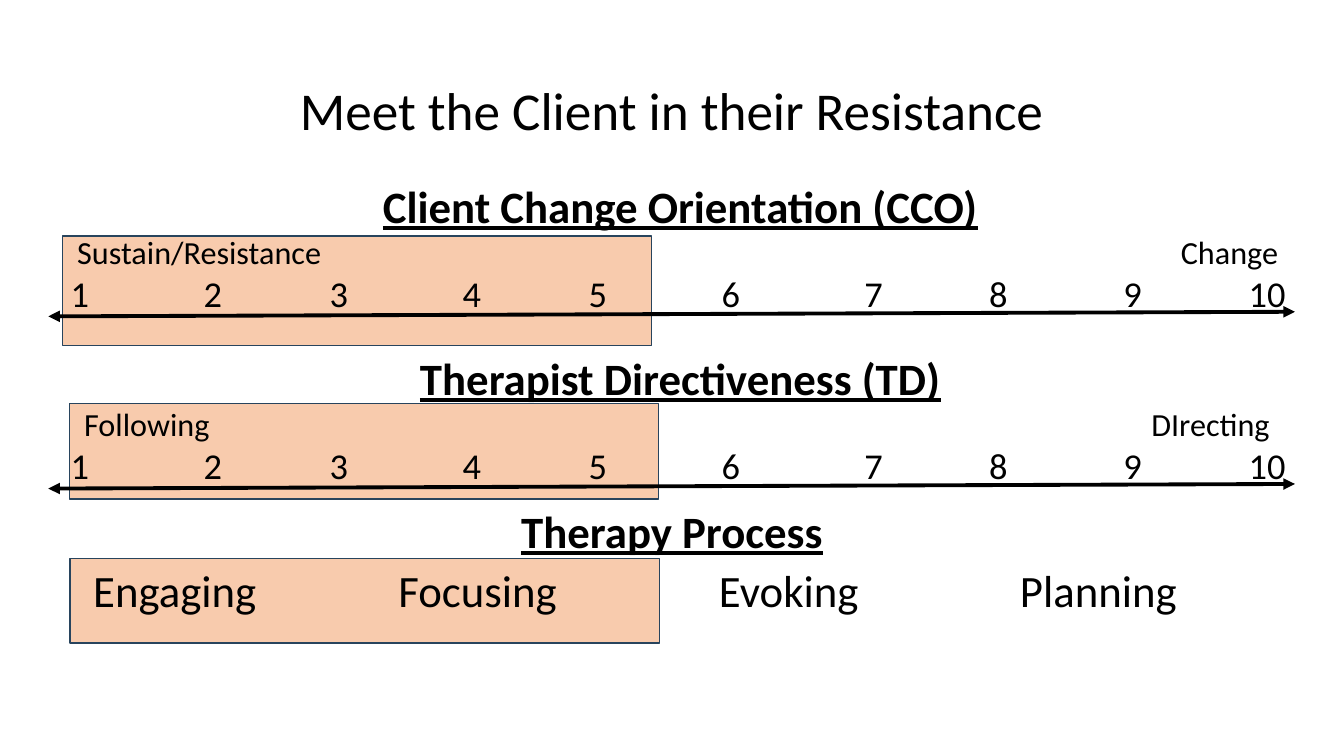
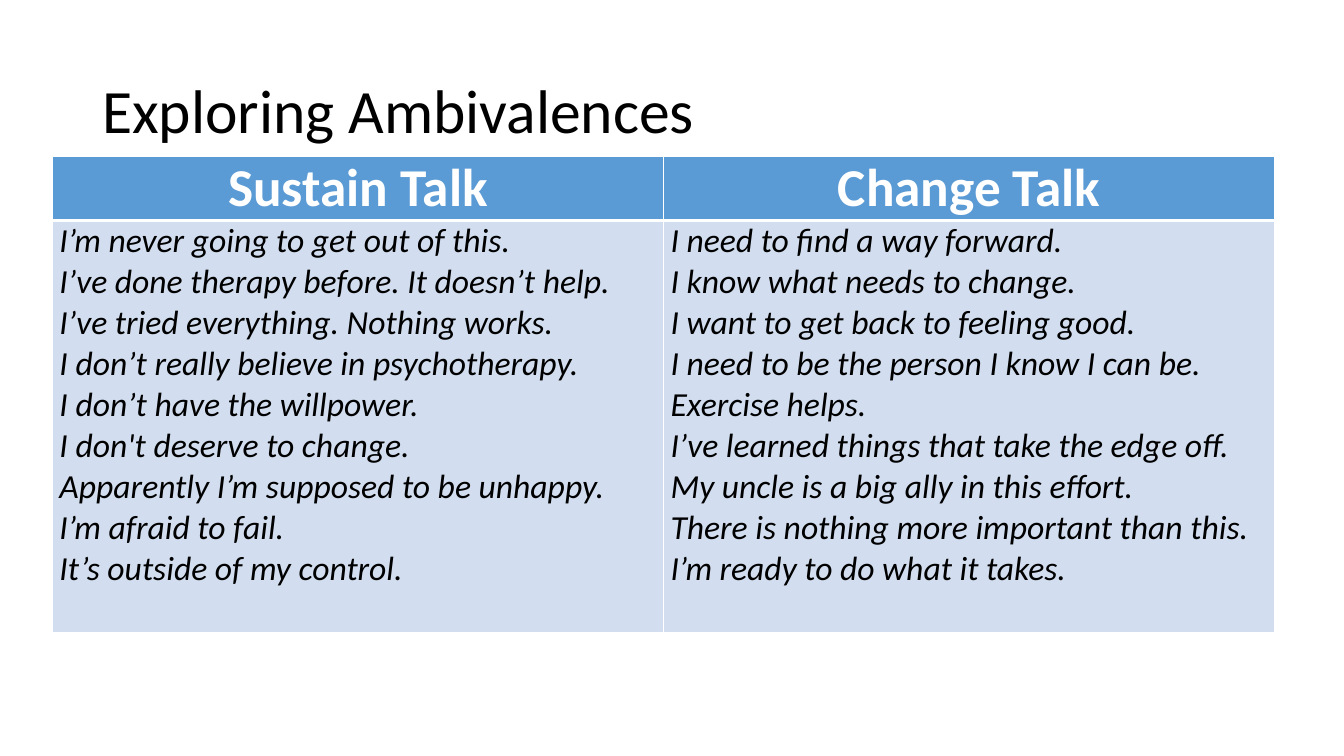
"""Builds two slides on client resistance and ambivalence."""
from lxml.etree import SubElement
from pptx import Presentation
from pptx.dml.color import RGBColor
from pptx.enum.shapes import MSO_CONNECTOR, MSO_SHAPE
from pptx.enum.text import MSO_ANCHOR, PP_ALIGN
from pptx.oxml.ns import qn
from pptx.util import Pt

FONT = "Calibri"
BLACK, WHITE = "000000", "FFFFFF"
PEACH, NAVY = "F8CBAD", "28445D"
BLUE, PALE = "5B9BD5", "D2DEEF"
TITLE = (66, 29, 828, 104)
HEAD = dict(size=32, bold=True, line=True, align="ctr")
MARKS = (15, 110, 200, 295, 385, 480, 582, 671, 767, 863)
STEPS = {"Engaging": 55, "Focusing": 273, "Evoking": 502, "Planning": 717}

TALK = {
    "Sustain Talk": (
        "I’m never going to get out of this.",
        "I’ve done therapy before. It doesn’t help.",
        "I’ve tried everything. Nothing works.",
        "I don’t really believe in psychotherapy.",
        "I don’t have the willpower.",
        "I don't deserve to change.",
        "Apparently I’m supposed to be unhappy.",
        "I’m afraid to fail.",
        "It’s outside of my control.",
    ),
    "Change Talk": (
        "I need to find a way forward.",
        "I know what needs to change.",
        "I want to get back to feeling good.",
        "I need to be the person I know I can be.",
        "Exercise helps.",
        "I’ve learned things that take the edge off.",
        "My uncle is a big ally in this effort.",
        "There is nothing more important than this.",
        "I’m ready to do what it takes.",
    ),
}


def paint(target, color):
    """Give a fill or line a solid colour."""
    target.solid()
    target.fore_color.rgb = RGBColor.from_string(color)


def write(frame, text, size, color=BLACK, bold=False, slant=False,
          line=False, align="l", space=None, tabs=()):
    """Add a paragraph, with tab stops given as (kind, place) pairs."""
    para = frame.paragraphs[0] if not frame.text else frame.add_paragraph()
    if tabs:
        stops = SubElement(para._p.get_or_add_pPr(), qn("a:tabLst"))
        for kind, place in tabs:
            SubElement(stops, qn("a:tab"), pos=str(Pt(place)), algn=kind)
    para.alignment = PP_ALIGN.from_xml(align)
    para.line_spacing = space
    run = para.add_run()
    run.text = text
    font = run.font
    font.name, font.size = FONT, Pt(size)
    font.bold, font.italic, font.underline = bold, slant, line
    paint(font.fill, color)


def spread(frame, words, tabs, size):
    """Write words on one line, each at its own tab stop."""
    write(frame, "".join("\t" + word for word in words), size, tabs=tabs)


def frame_at(slide, box, anchor=MSO_ANCHOR.TOP):
    """Add a wrapping text box and return its frame."""
    frame = slide.shapes.add_textbox(*map(Pt, box)).text_frame
    frame.word_wrap = True
    frame.vertical_anchor = anchor
    return frame


def title(slide, text, size, align="l"):
    """Place the slide title."""
    frame = frame_at(slide, TITLE, MSO_ANCHOR.MIDDLE)
    write(frame, text, size, align=align, space=0.9)


def panel(slide, left, top, high):
    """Draw the peach panel behind the resistant half."""
    shape = slide.shapes.add_shape(
        MSO_SHAPE.RECTANGLE, Pt(left), Pt(top), Pt(421), Pt(high))
    shape.shadow.inherit = False
    paint(shape.fill, PEACH)
    paint(shape.line.fill, NAVY)
    shape.line.width = Pt(1)


def arrow(slide, *ends):
    """Draw a line with a head at both ends."""
    link = slide.shapes.add_connector(MSO_CONNECTOR.STRAIGHT, *map(Pt, ends))
    paint(link.line.fill, BLACK)
    link.line.width = Pt(2.75)
    for end in ("a:headEnd", "a:tailEnd"):
        SubElement(link.line._get_or_add_ln(), qn(end), type="triangle")
    SubElement(link._element.spPr, qn("a:effectLst"))


def scale(slide, box, name, ends, tabs, back):
    """Draw a ten-point scale; back is the panel's offset and height."""
    left, top, wide, _ = box
    right, down, high = back
    panel(slide, left + right, top + down, high)
    frame = frame_at(slide, box)
    write(frame, name, **HEAD)
    spread(frame, ends, tabs, 23)
    spread(frame, map(str, range(1, 11)), [("ctr", mark) for mark in MARKS], 26)
    arrow(slide, left - 0.5, top + 102, left + wide - 12, top + 98.7)


def process(slide, box):
    """Draw the therapy steps under their heading."""
    left, top, wide, high = box
    panel(slide, left + 45.5, top + 42.5, 60.5)
    write(frame_at(slide, (left + 196.5, top, 558, 68)),
          "Therapy Process", **HEAD)
    frame = frame_at(slide, (left, top + 41.8, wide, high - 41.8))
    spread(frame, STEPS, [("l", place) for place in STEPS.values()], 32)


def edge(cell, sides):
    """Give a cell white borders of the widths in sides."""
    for side, width in sides.items():
        line = SubElement(cell._tc.get_or_add_tcPr(), qn("a:ln" + side),
                          w=str(Pt(width)))
        fill = SubElement(line, qn("a:solidFill"))
        SubElement(fill, qn("a:srgbClr"), val=WHITE)


def fill_cell(cell, lines, back, sides, **style):
    """Fill one table cell with lines of text."""
    edge(cell, sides)
    paint(cell.fill, back)
    cell.margin_left = cell.margin_right = Pt(5)
    cell.margin_top = cell.margin_bottom = 0
    for text in lines:
        write(cell.text_frame, text, **style)


def talk(slide, box):
    """Place the table of sustain and change talk."""
    table = slide.shapes.add_table(2, len(TALK), *map(Pt, box)).table
    table.horz_banding = False
    table.rows[0].height = Pt(46)
    table.rows[1].height = Pt(box[3] - 46)
    for col, (name, lines) in enumerate(TALK.items()):
        fill_cell(table.cell(0, col), [name], BLUE, dict(L=1, R=1, T=1, B=3),
                  size=38, color=WHITE, bold=True, align="ctr")
        fill_cell(table.cell(1, col), lines, PALE, dict(L=1, R=1, T=3, B=1),
                  size=24, slant=True)


def main():
    """Build and save the deck."""
    deck = Presentation()
    deck.slide_width, deck.slide_height = Pt(960), Pt(540)
    first, second = (deck.slides.add_slide(deck.slide_layouts[6])
                     for _ in range(2))
    title(first, "Meet the Client in their Resistance", 38, "ctr")
    scale(first, (35, 124, 902, 105), "Client Change Orientation (CCO)",
          ("Sustain/Resistance", "Change"), [("l", 13), ("r", 871)],
          (9.5, 44.5, 78.5))
    scale(first, (35, 247, 902, 105), "Therapist Directiveness (TD)",
          ("Following", "DIrecting"), [("l", 18), ("r", 865)],
          (14.5, 41, 68.5))
    process(first, (4.5, 356.4, 906, 116.6))
    title(second, "Exploring Ambivalences", 44)
    talk(second, (37.5, 111.6, 873, 340))
    deck.save("out.pptx")


if __name__ == "__main__":
    main()
